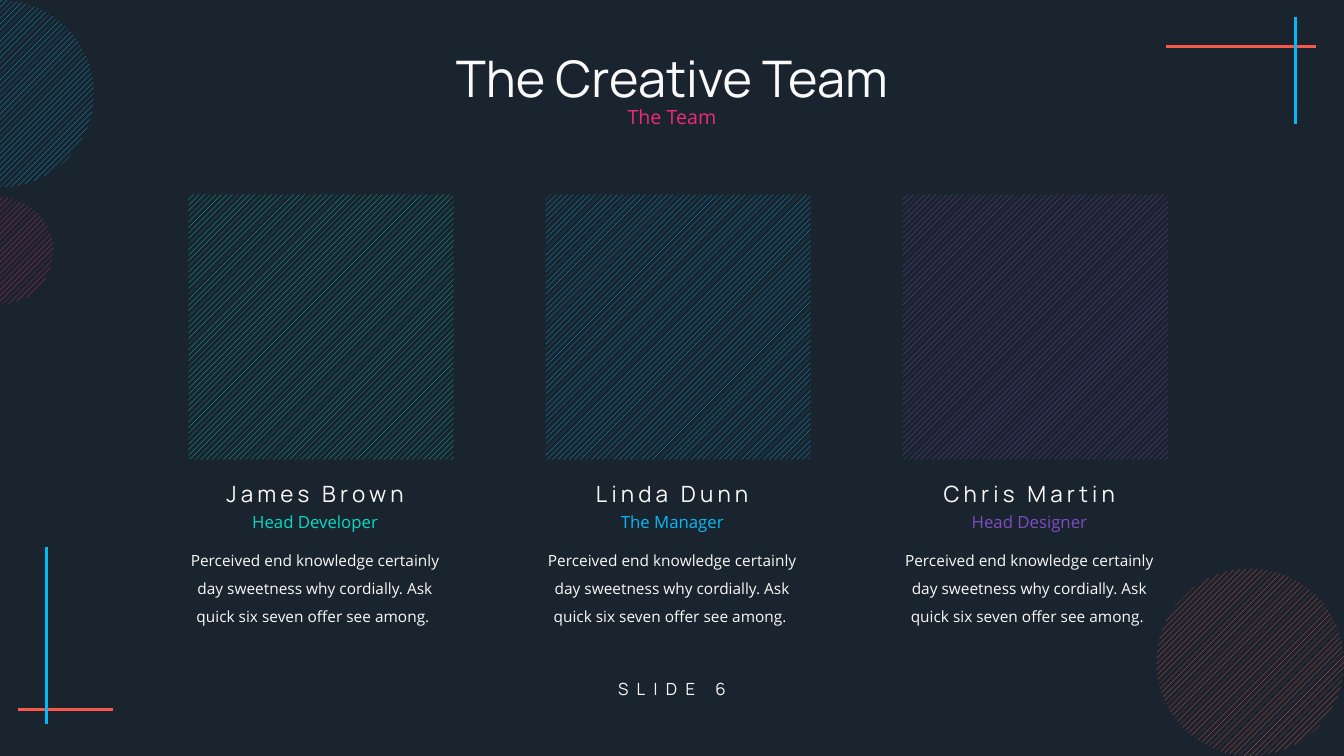
from lxml import etree
from pptx import Presentation
from pptx.dml.color import RGBColor
from pptx.enum.dml import MSO_PATTERN
from pptx.enum.shapes import MSO_CONNECTOR, MSO_SHAPE
from pptx.enum.text import MSO_ANCHOR, MSO_AUTO_SIZE, PP_ALIGN
from pptx.oxml.ns import qn
from pptx.util import Inches, Pt

STRIPES = MSO_PATTERN.WIDE_UPWARD_DIAGONAL
STRAIGHT = MSO_CONNECTOR.STRAIGHT
OVAL, RECTANGLE = MSO_SHAPE.OVAL, MSO_SHAPE.RECTANGLE
TOP, MIDDLE = MSO_ANCHOR.TOP, MSO_ANCHOR.MIDDLE
FIT_SHAPE = MSO_AUTO_SIZE.SHAPE_TO_FIT_TEXT
CENTER = PP_ALIGN.CENTER

COLORS = {
    "night": "1A242E", "white": "F9F9F9", "coral": "F75847", "blue": "05B9F6",
    "pink": "EF2A79", "teal": "08DAC6", "purple": "7E4CC7",
}
HEADING, BODY = "Manrope", "Open Sans"

# Square grid: 40 columns by 22.5 rows
COLUMNS, ROWS = 40, 22.5
CELL = Inches(40 / 3) / COLUMNS


def grid(cells):
    return round(cells * CELL)


def color(name):
    return RGBColor.from_string(COLORS[name])


class SlideBuilder:
    def __init__(self, presentation):
        self.slide = presentation.slides.add_slide(presentation.slide_layouts[6])
        background = self.slide.background.fill
        background.solid()
        background.fore_color.rgb = color("night")

    def line(self, start, end, tint):
        points = [grid(value) for value in (*start, *end)]
        connector = self.slide.shapes.add_connector(STRAIGHT, *points)
        connector.line.color.rgb = color(tint)
        connector.line.width = Pt(2)
        properties = connector._element.find(qn("p:spPr"))
        etree.SubElement(properties, qn("a:effectLst"))

    def striped(self, kind, left, top, size, tint):
        box = [grid(value) for value in (left, top, size, size)]
        shape = self.slide.shapes.add_shape(kind, *box)
        shape.shadow.inherit = False
        shape.fill.patterned()
        shape.fill.pattern = STRIPES
        shape.fill.fore_color.rgb = color(tint)
        shape.fill.back_color.rgb = color("night")
        shape.line.fill.background()

    def text(self, words, center, top, width, height, size, font, tint="white",
             wrap=True, anchor=TOP, grow=False, tracking=0, leading=None, before=None):
        box = [grid(value) for value in (center - width / 2, top, width, height)]
        frame = self.slide.shapes.add_textbox(*box).text_frame
        frame.word_wrap = wrap
        frame.vertical_anchor = anchor
        if grow:
            frame.auto_size = FIT_SHAPE
        paragraph = frame.paragraphs[0]
        paragraph.alignment = CENTER
        paragraph.line_spacing = leading
        if before:
            paragraph.space_before = Pt(before)
        run = paragraph.add_run()
        run.text = words
        run.font.name = font
        run.font.size = Pt(size)
        run.font.color.rgb = color(tint)
        if tracking:
            run._r.get_or_add_rPr().set("spc", str(tracking * 100))


def main():
    presentation = Presentation()
    presentation.slide_width = grid(COLUMNS)
    presentation.slide_height = grid(ROWS)
    team = SlideBuilder(presentation)
    middle = COLUMNS / 2

    # Crossed lines in the corners
    team.line((34.71, 1.38), (39.18, 1.38), "coral")
    team.line((38.55, 3.69), (38.55, 0.51), "blue")
    team.line((3.36, 21.12), (0.54, 21.12), "coral")
    team.line((1.38, 16.29), (1.38, 21.54), "blue")

    # Striped circles at the edges
    large, small = 5.58, 3.18
    team.striped(OVAL, COLUMNS - large, ROWS - large, large, "coral")
    team.striped(OVAL, -small / 2, 5.88, small, "pink")
    team.striped(OVAL, -large / 2, 0, large, "blue")

    # Slide number and headings
    team.text("SLIDE 6", middle, 19.89, 6.24, 1.23, 12, HEADING,
              anchor=MIDDLE, tracking=6)
    for words, top, size, font, tint in (
        ("The Team", 2.55, 14, BODY, "pink"),
        ("The Creative Team", 1.47, 36, HEADING, "white"),
    ):
        team.text(words, middle, top, 37.29, 1.92, size, font, tint,
                  anchor=MIDDLE, leading=0.9, before=10)

    # Team members: portrait area, name, role and blurb
    blurb = ("Perceived end knowledge certainly day sweetness why cordially. "
             "Ask quick six seven offer see among. ")
    members = (
        ("James Brown", 6.51, "Head Developer", 4.38, "teal"),
        ("Linda Dunn", 5.58, "The Manager", 3.69, "blue"),
        ("Chris Martin", 6.12, "Head Designer", 4.08, "purple"),
    )
    pitch = 10.63
    for index, (name, name_width, role, role_width, tint) in enumerate(members):
        left = 5.61 + index * pitch
        center = left + 3.77
        team.striped(RECTANGLE, left, 5.79, 7.89, tint)
        team.text(name, center, 14.13, name_width, 1.11, 16, HEADING,
                  wrap=False, grow=True, tracking=3)
        team.text(role, center, 15.09, role_width, 0.9, 12, BODY, tint,
                  wrap=False, grow=True)
        team.text(blurb, center, 15.99, 8.22, 2.79, 11, BODY,
                  grow=True, leading=1.5)

    presentation.save("out.pptx")


if __name__ == "__main__":
    main()
